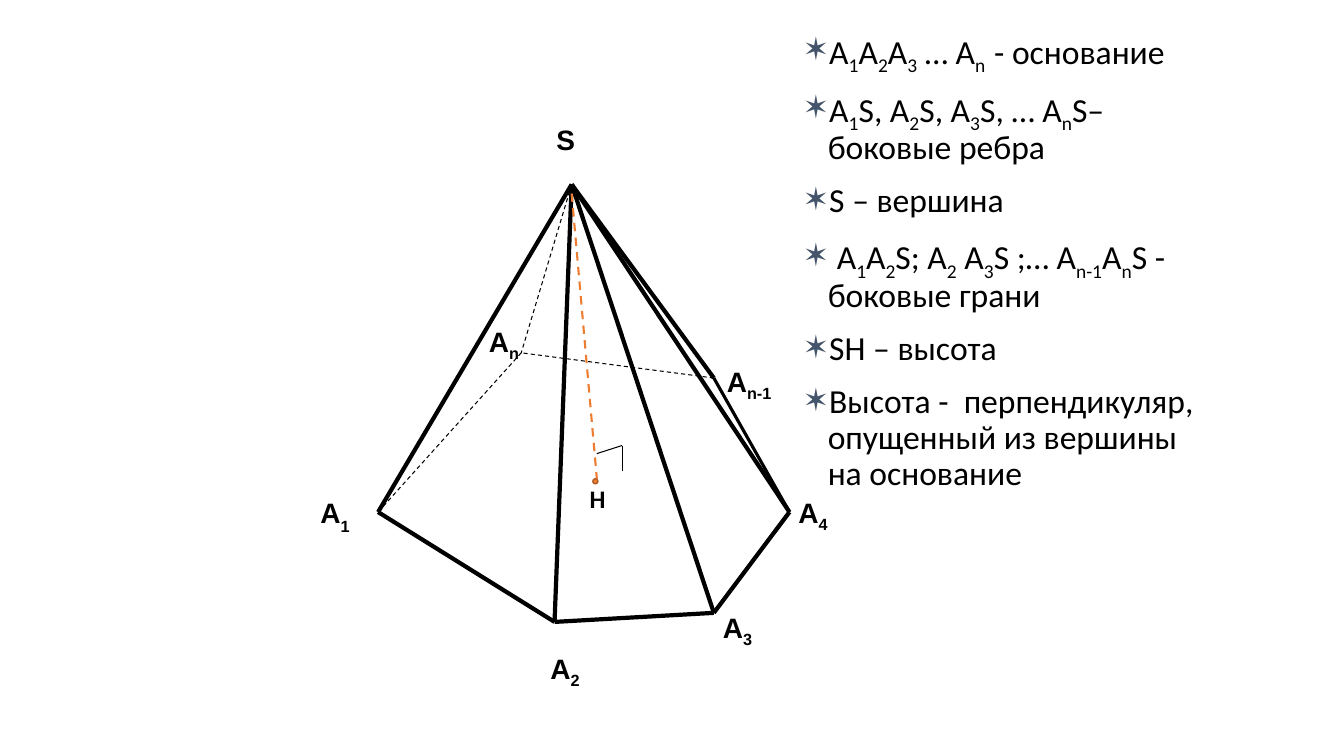
from lxml.etree import SubElement
from pptx import Presentation
from pptx.dml.color import RGBColor
from pptx.enum.dml import MSO_LINE_DASH_STYLE as Dash
from pptx.enum.shapes import MSO_CONNECTOR as Connector, MSO_SHAPE as Shape
from pptx.enum.text import MSO_ANCHOR as Anchor, MSO_AUTO_SIZE as AutoSize
from pptx.oxml.ns import qn
from pptx.util import Pt

EMU_PER_PX = 9144  # 100 px to the inch


def px(value):
    return value * EMU_PER_PX


def color(hex_string):
    return RGBColor.from_string(hex_string)


def write(paragraph, text, *, size, font, bold=False, ink="000000", base=-25):
    """Fill a paragraph; parts between bars, as in А|1|, become subscripts."""
    for index, part in enumerate(text.split("|")):
        if not part:
            continue
        run = paragraph.add_run()
        run.text = part
        run.font.size = Pt(size)
        run.font.name = font
        run.font.bold = bold
        run.font.color.rgb = color(ink)
        if index % 2:
            run.font._element.set("baseline", str(base * 1000))


class PyramidSlide:
    BLACK, ORANGE, BROWN, BULLET = "000000", "ED7D31", "AF5C24", "44546A"

    def __init__(self, presentation):
        self.slide = presentation.slides.add_slide(presentation.slide_layouts[1])
        self.shapes = self.slide.shapes
        title = self.shapes.title._element
        title.getparent().remove(title)

    def place(self, shape, left, top, width, height):
        shape.left, shape.top = px(left), px(top)
        shape.width, shape.height = px(width), px(height)

    def bullet(self, paragraph):
        """Star bullet, hanging indent and half-line spacing above."""
        paragraph.line_spacing = 0.9
        properties = paragraph._p.get_or_add_pPr()
        properties.set("marL", str(px(25)))
        properties.set("indent", str(px(-25)))
        spacing = SubElement(properties, qn("a:spcBef"))
        SubElement(spacing, qn("a:spcPct"), val="50000")
        bullet_color = SubElement(properties, qn("a:buClr"))
        SubElement(bullet_color, qn("a:srgbClr"), val=self.BULLET)
        SubElement(properties, qn("a:buSzPct"), val="95000")
        SubElement(properties, qn("a:buChar"), char="✶")

    def bullet_list(self, items, left, top, width, height):
        body = self.slide.placeholders[1]
        self.place(body, left, top, width, height)
        frame = body.text_frame
        frame.auto_size = AutoSize.NONE
        frame.vertical_anchor = Anchor.TOP
        for index, item in enumerate(items):
            paragraph = frame.add_paragraph() if index else frame.paragraphs[0]
            self.bullet(paragraph)
            write(paragraph, item, size=24, font="Calibri")

    def line(self, start, end, width, ink=BLACK, dashed=False):
        connector = self.shapes.add_connector(
            Connector.STRAIGHT, *map(px, start), *map(px, end))
        connector.line.color.rgb = color(ink)
        connector.line.width = Pt(width)
        if dashed:
            connector.line.dash_style = Dash.DASH
        SubElement(connector._element.spPr, qn("a:effectLst"))

    def label(self, text, left, top, width, height=43, size=20, font="Arial", base=-25):
        box = self.shapes.add_textbox(px(left), px(top), px(width), px(height))
        frame = box.text_frame
        frame.word_wrap = True
        frame.auto_size = AutoSize.SHAPE_TO_FIT_TEXT
        write(frame.paragraphs[0], text, size=size, font=font, bold=True, base=base)

    def dot(self, left, top, diameter):
        dot = self.shapes.add_shape(
            Shape.OVAL, px(left), px(top), px(diameter), px(diameter))
        dot.shadow.inherit = False
        dot.fill.solid()
        dot.fill.fore_color.rgb = color(self.ORANGE)
        dot.line.color.rgb = color(self.BROWN)
        dot.line.width = Pt(1)


DEFINITIONS = [
    "А|1|А|2|А|3| … А|n  |- основание",
    "А|1|S, А|2|S, А|3|S, … А|n|S– боковые ребра",
    "S – вершина",
    " А|1|А|2|S; А|2| А|3|S ;… А|n-1|А|n|S - боковые грани",
    "SH – высота",
    "Высота -  перпендикуляр, опущенный из вершины на основание",
]
APEX = (567, 183)
A1, A2, A3, A4 = (375, 508), (550, 617), (708, 608), (783, 508)
A_LAST_BUT_ONE, A_LAST = (708, 375), (517, 350)
FOOT = (592, 475)
ANGLE = [(592, 450), (617, 442), (617, 467)]
THICK, MEDIUM, THIN = 3, 2.25, 0.75


def main():
    presentation = Presentation()
    presentation.slide_width, presentation.slide_height = px(1333), px(750)
    pyramid = PyramidSlide(presentation)
    pyramid.bullet_list(DEFINITIONS, 786, 26, 417, 651)

    base = [A1, A2, A3, A4, A_LAST_BUT_ONE, A_LAST]
    base_widths = [THICK, THICK, THICK, MEDIUM, THIN, THIN]
    for start, end, width in zip(base, base[1:] + base[:1], base_widths):
        pyramid.line(start, end, width, dashed=width == THIN)
    for vertex in (A1, A2, A3, A4, A_LAST, A_LAST_BUT_ONE):
        hidden = vertex == A_LAST
        pyramid.line(APEX, vertex, THIN if hidden else THICK, dashed=hidden)

    pyramid.label("А|1|", 308, 487, 52, base=-30)
    pyramid.label("А|2|", 536, 641, 56)
    pyramid.label("А|3|", 707, 601, 51)
    pyramid.label("А|4|", 782, 487, 68)
    pyramid.label("А|n|", 475, 317, 68)
    pyramid.label("А|n-1|", 711, 357, 81)
    pyramid.label("S", 542, 117, 52)

    pyramid.line((567, 192), FOOT, 1.5, ink=pyramid.ORANGE, dashed=True)
    for start, end in zip(ANGLE, ANGLE[1:]):
        pyramid.line(start, end, THIN)
    pyramid.label("Н", 575, 475, 45, height=40, size=18, font="Calibri")
    pyramid.dot(588, 475, 5)
    presentation.save("out.pptx")


if __name__ == "__main__":
    main()
